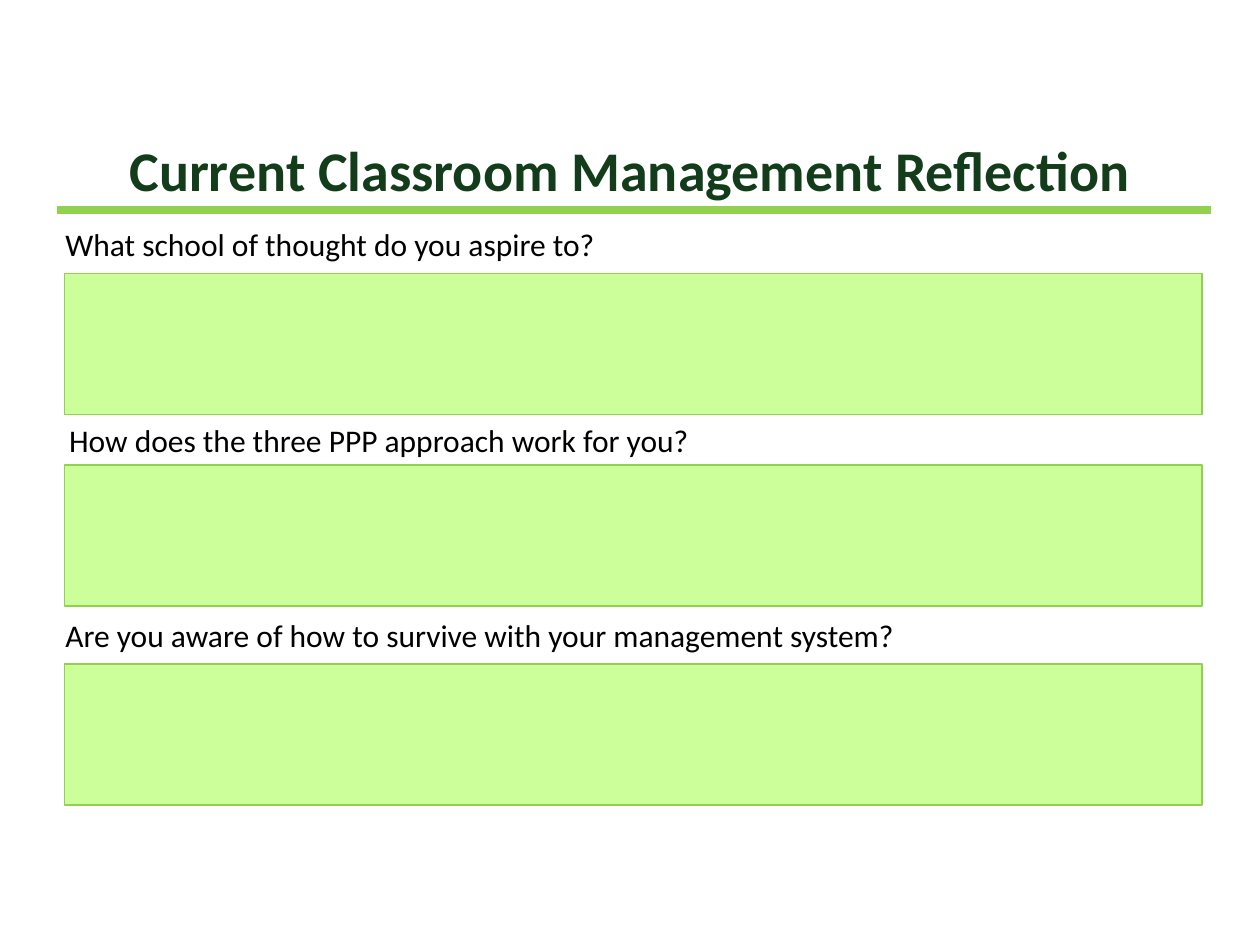
from pptx import Presentation
from pptx.dml.color import RGBColor
from pptx.enum.shapes import MSO_CONNECTOR, MSO_SHAPE
from pptx.enum.text import MSO_ANCHOR, MSO_AUTO_SIZE, PP_ALIGN
from pptx.util import Pt
from lxml.etree import SubElement
from pptx.oxml.ns import qn

COLORS = {
    "background": "FFFFFF",
    "heading": "133D1A",
    "question": "000000",
    "answer": "CCFF99",
    "border": "92D050",
}
HEADING_FONT = {"name": "Calibri", "size": Pt(32), "bold": True}
QUESTION_FONT = {"name": "Calibri", "size": Pt(18), "bold": False}
FRAME = {"word_wrap": True, "auto_size": MSO_AUTO_SIZE.NONE}

# Question, left and top of its label, top of its answer box
REFLECTIONS = [
    ("What school of thought do you aspire to?", 30.24, 125.28, 156.24),
    ("How does the three PPP approach work for you?", 32.4, 236.88, 265.68),
    ("Are you aware of how to survive with your management system?", 30.24, 348.48, 379.44),
]
ANSWER_LEFT, ANSWER_WIDTH, ANSWER_HEIGHT = 36.72, 650.16, 80.64
QUESTION_WIDTH, QUESTION_HEIGHT = 656.64, 15.12


def rgb(role):
    return RGBColor.from_string(COLORS[role])


def apply_format(target, values):
    for attribute, value in values.items():
        setattr(target, attribute, value)


def write(frame, wording, font_format, role, anchor, alignment):
    apply_format(frame, {**FRAME, "vertical_anchor": anchor})
    paragraph = frame.paragraphs[0]
    paragraph.alignment = alignment
    run = paragraph.add_run()
    run.text = wording
    apply_format(run.font, font_format)
    run.font.color.rgb = rgb(role)


def place_heading(slide, left, top, width, height):
    heading = slide.shapes.title
    apply_format(heading, {"left": Pt(left), "top": Pt(top),
                           "width": Pt(width), "height": Pt(height)})
    heading.fill.solid()
    heading.fill.fore_color.rgb = rgb("background")
    write(heading.text_frame, "Current Classroom Management Reflection",
          HEADING_FONT, "heading", MSO_ANCHOR.MIDDLE, PP_ALIGN.CENTER)

    # Rule along the lower edge of the heading
    rule_y = Pt(top + height - 0.72)
    rule = slide.shapes.add_connector(
        MSO_CONNECTOR.STRAIGHT, Pt(left + 32.4), rule_y, Pt(left + width - 28.08), rule_y)
    rule.line.color.rgb = rgb("border")
    rule.line.width = Pt(4.5)
    SubElement(rule._element.spPr, qn("a:effectLst"))


def place_question(slide, wording, left, top, width, height):
    question = slide.shapes.add_textbox(Pt(left), Pt(top), Pt(width), Pt(height))
    write(question.text_frame, wording, QUESTION_FONT, "question",
          MSO_ANCHOR.TOP, PP_ALIGN.LEFT)


def place_answer(slide, left, top, width, height):
    answer = slide.shapes.add_shape(
        MSO_SHAPE.RECTANGLE, Pt(left), Pt(top), Pt(width), Pt(height))
    answer.shadow.inherit = False
    answer.fill.solid()
    answer.fill.fore_color.rgb = rgb("answer")
    answer.line.color.rgb = rgb("border")
    answer.line.width = Pt(0.75)


def main():
    deck = Presentation()
    apply_format(deck, {"slide_width": Pt(720), "slide_height": Pt(540)})
    slide = deck.slides.add_slide(deck.slide_layouts.get_by_name("Title Only"))
    slide.background.fill.solid()
    slide.background.fill.fore_color.rgb = rgb("background")

    place_heading(slide, 0, 72, 720, 48.96)
    for wording, question_left, question_top, answer_top in REFLECTIONS:
        place_question(slide, wording, question_left, question_top,
                       QUESTION_WIDTH, QUESTION_HEIGHT)
        place_answer(slide, ANSWER_LEFT, answer_top, ANSWER_WIDTH, ANSWER_HEIGHT)

    deck.save("out.pptx")


if __name__ == "__main__":
    main()
